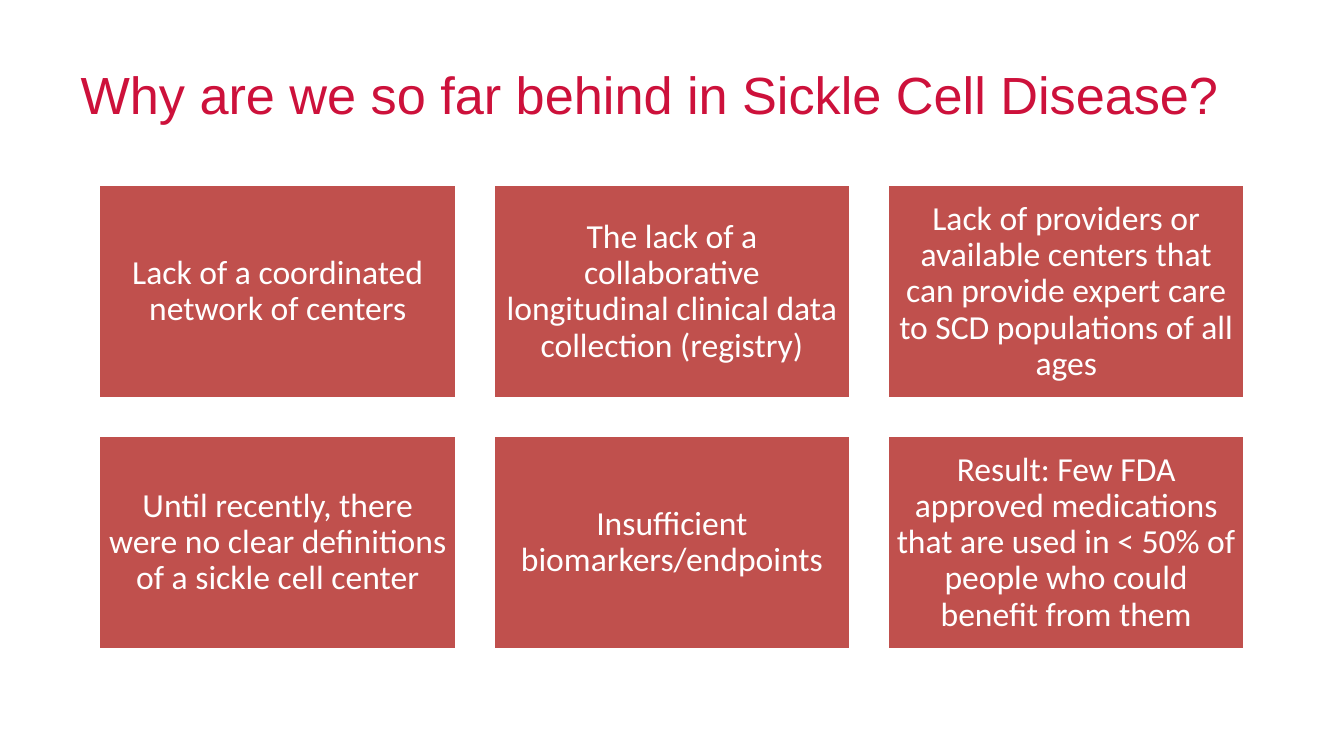
from dataclasses import dataclass

from pptx import Presentation
from pptx.dml.color import RGBColor
from pptx.enum.shapes import MSO_SHAPE
from pptx.enum.text import MSO_ANCHOR, PP_ALIGN
from pptx.slide import Slide
from pptx.util import Pt

RECTANGLE = MSO_SHAPE.RECTANGLE
MIDDLE = MSO_ANCHOR.MIDDLE
LEFT, CENTER = PP_ALIGN.LEFT, PP_ALIGN.CENTER

CRIMSON = RGBColor(0xCD, 0x11, 0x3B)
BRICK = RGBColor(0xC0, 0x50, 0x4D)
WHITE = RGBColor(0xFF, 0xFF, 0xFF)

TITLE_ONLY = 5
COLUMNS = 3
GRID_LEFT, GRID_TOP = 52.8, 98.8
CARD_WIDTH, CARD_HEIGHT = 192, 115.2
GAP = 19.2
INSET = 5

REASONS = (
    "Lack of a coordinated network of centers",
    "The lack of a collaborative longitudinal clinical data collection (registry)",
    "Lack of providers or available centers that can provide expert care to SCD populations of all ages",
    "Until recently, there were no clear definitions of a sickle cell center",
    "Insufficient biomarkers/endpoints",
    "Result: Few FDA approved medications that are used in < 50% of people who could benefit from them",
)


@dataclass(frozen=True)
class ReasonCard:
    text: str
    left: float
    top: float


def layout_cards() -> list[ReasonCard]:
    cards = []
    for index, text in enumerate(REASONS):
        row, column = divmod(index, COLUMNS)
        left = GRID_LEFT + column * (CARD_WIDTH + GAP)
        top = GRID_TOP + row * (CARD_HEIGHT + GAP)
        cards.append(ReasonCard(text, left, top))
    return cards


def format_title(page: Slide, text: str) -> None:
    title = page.shapes.title
    title.left, title.top = Pt(36), Pt(28.8)
    title.width, title.height = Pt(648), Pt(42.5)
    frame = title.text_frame
    frame.text = text
    frame.word_wrap = True
    frame.vertical_anchor = MIDDLE
    para = frame.paragraphs[0]
    para.alignment = LEFT
    span = para.runs[0]
    span.font.name = "Arial"
    span.font.size = Pt(28)
    span.font.color.rgb = CRIMSON


def draw_card(page: Slide, card: ReasonCard) -> None:
    box = page.shapes.add_shape(
        RECTANGLE, Pt(card.left), Pt(card.top), Pt(CARD_WIDTH), Pt(CARD_HEIGHT)
    )
    box.shadow.inherit = False
    box.fill.solid()
    box.fill.fore_color.rgb = BRICK
    box.line.color.rgb = WHITE
    box.line.width = Pt(2)
    frame = box.text_frame
    frame.text = card.text
    frame.word_wrap = True
    frame.vertical_anchor = MIDDLE
    frame.margin_left = frame.margin_right = Pt(INSET)
    frame.margin_top = frame.margin_bottom = Pt(INSET)
    para = frame.paragraphs[0]
    para.alignment = CENTER
    para.line_spacing = 0.9
    span = para.runs[0]
    span.font.name = "Calibri"
    span.font.size = Pt(18)
    span.font.color.rgb = WHITE


def main() -> None:
    deck = Presentation()
    deck.slide_width, deck.slide_height = Pt(720), Pt(405)
    page = deck.slides.add_slide(deck.slide_layouts[TITLE_ONLY])
    format_title(page, "Why are we so far behind in Sickle Cell Disease?")
    for card in layout_cards():
        draw_card(page, card)
    deck.save("out.pptx")


if __name__ == "__main__":
    main()
